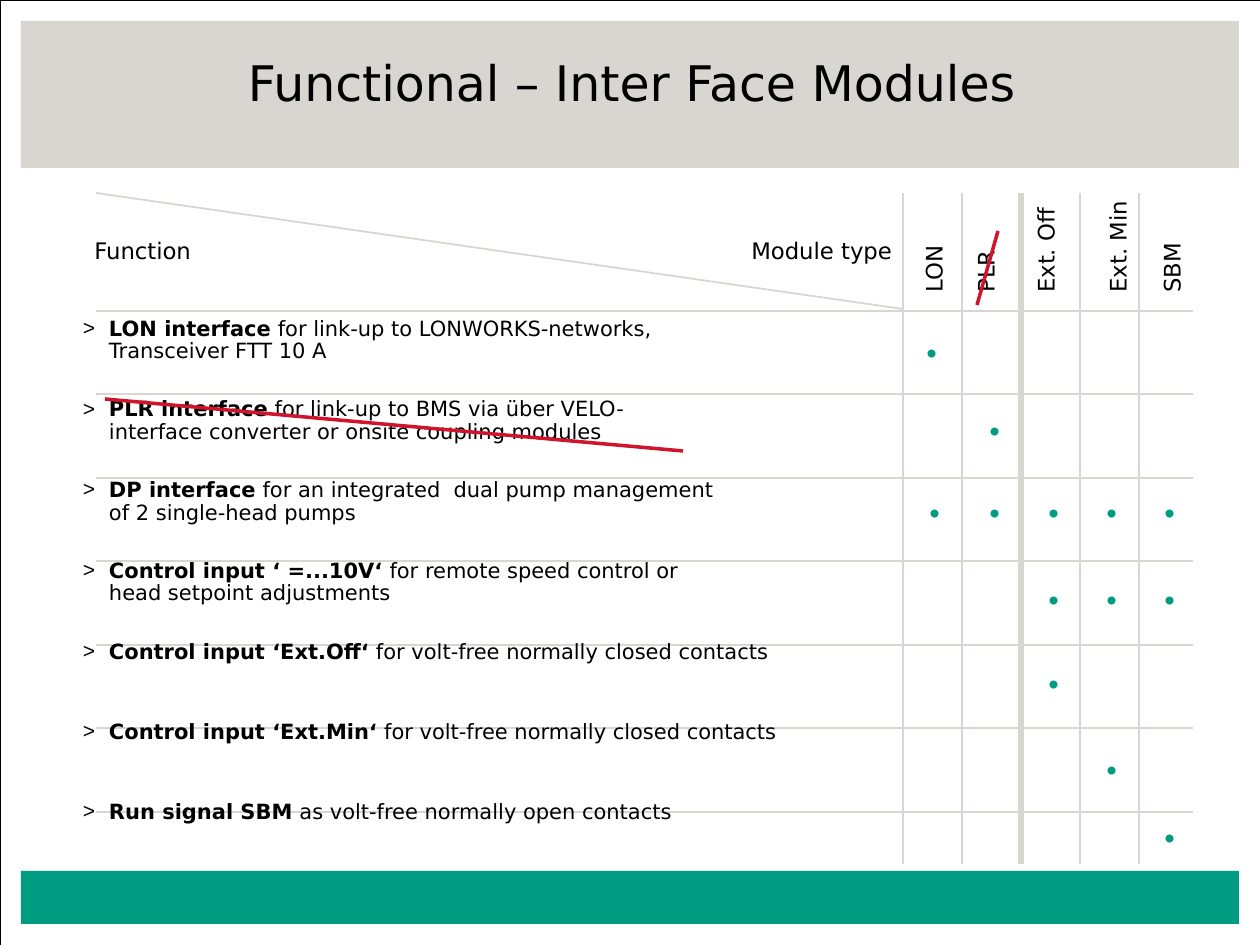
from copy import deepcopy

from lxml.etree import SubElement
from pptx import Presentation
from pptx.dml.color import RGBColor
from pptx.enum.shapes import MSO_CONNECTOR, MSO_SHAPE
from pptx.enum.text import MSO_ANCHOR, MSO_AUTO_SIZE, PP_ALIGN
from pptx.oxml.ns import qn
from pptx.util import Emu, Pt

COLOURS = {"black": "000000", "green": "009C82", "stone": "D9D6D1", "red": "CF142B"}
FUNCTIONS = [
    ("LON interface", " for link-up to LONWORKS-networks,\nTransceiver FTT 10 A"),
    ("PLR interface", " for link-up to BMS via über VELO-\ninterface converter or onsite coupling modules"),
    ("DP interface", " for an integrated  dual pump management\nof 2 single-head pumps"),
    ("Control input ‘ =...10V‘", " for remote speed control or\nhead setpoint adjustments"),
    ("Control input ‘Ext.Off‘", " for volt-free normally closed contacts"),
    ("Control input ‘Ext.Min‘", " for volt-free normally closed contacts"),
    ("Run signal SBM", " as volt-free normally open contacts"),
]
MODULES = [("LON", 936, 76), ("PLR", 988, 71), ("Ext. Off", 1048, 116), ("Ext. Min", 1120, 122), ("SBM", 1174, 78)]
DOT_ROWS = [
    (339, [912]),
    (417, [975]),
    (499, [915, 975, 1034, 1092, 1150]),
    (586, [1034, 1092, 1150]),
    (670, [1034]),
    (756, [1092]),
    (824, [1150]),
]


class SlideBuilder:
    """Draws styled elements on one slide, with lengths in px."""

    font = "DejaVu Sans"
    scale = 914400 / 126
    label_height = 34

    def __init__(self, deck):
        self.slide = deck.slides.add_slide(deck.slide_layouts[1])
        self.shapes = self.slide.shapes

    def px(self, *lengths):
        return [Emu(round(length * self.scale)) for length in lengths]

    def colour(self, name):
        return RGBColor.from_string(COLOURS[name])

    def style(self, span, size, colour="black", bold=False):
        span.font.name = self.font
        span.font.size = Pt(size)
        span.font.bold = bold
        span.font.color.rgb = self.colour(colour)

    def rectangle(self, left, top, width, height, fill=None, line=None):
        box = self.shapes.add_shape(MSO_SHAPE.RECTANGLE, *self.px(left, top, width, height))
        box.shadow.inherit = False
        if fill:
            box.fill.solid()
            box.fill.fore_color.rgb = self.colour(fill)
        else:
            box.fill.background()
        if line:
            box.line.color.rgb = self.colour(line)
            box.line.width = Pt(0.25)
        else:
            box.line.fill.background()

    def line(self, start_x, start_y, end_x, end_y, colour="stone", width=1):
        line = self.shapes.add_connector(MSO_CONNECTOR.STRAIGHT, *self.px(start_x, start_y, end_x, end_y))
        line.line.color.rgb = self.colour(colour)
        line.line.width = Pt(width)
        SubElement(line._element.spPr, qn("a:effectLst"))

    def label(self, text, left, top, width, colour="black", bold=False, rotation=0):
        box = self.shapes.add_textbox(*self.px(left, top, width, self.label_height))
        box.rotation = rotation
        frame = box.text_frame
        frame.word_wrap = False
        frame.auto_size = MSO_AUTO_SIZE.SHAPE_TO_FIT_TEXT
        frame.text = text
        para = frame.paragraphs[0]
        para.line_spacing = 0.8
        self.style(para.runs[0], 13, colour, bold)

    def upright_label(self, text, centre, length, bottom=305):
        top = bottom - (length + self.label_height) / 2
        self.label(text, centre - length / 2, top, length, rotation=270)

    def placeholder(self, index, left, top, width, height, inset_top=0, inset_bottom=0):
        box = self.slide.placeholders[index]
        box.left, box.top, box.width, box.height = self.px(left, top, width, height)
        frame = box.text_frame
        frame.auto_size = MSO_AUTO_SIZE.NONE
        frame.margin_left = frame.margin_right = 0
        frame.margin_top, frame.margin_bottom = self.px(inset_top, inset_bottom)
        self.shapes._spTree.append(box._element)
        return frame

    def title(self, text):
        frame = self.placeholder(0, 147, 73, 969, 58, inset_bottom=20)
        frame.vertical_anchor = MSO_ANCHOR.BOTTOM
        frame.text = text
        para = frame.paragraphs[0]
        para.alignment = PP_ALIGN.CENTER
        self.style(para.runs[0], 28)

    def bullet_list(self, items, pitch=45.37, line_height=12.57):
        frame = self.placeholder(1, 83, 199, 1032, 683, inset_top=119)
        frame.vertical_anchor = MSO_ANCHOR.TOP
        gap = 0
        for index, (name, detail) in enumerate(items):
            para = frame.add_paragraph() if index else frame.paragraphs[0]
            para.text = name
            para.level = 1
            properties = para._p.get_or_add_pPr()
            indent, = self.px(26)
            properties.set("marL", str(indent))
            properties.set("indent", str(-indent))
            SubElement(properties, qn("a:buChar"), char=">")
            para.line_spacing = 0.9
            para.space_before = Pt(gap)
            self.style(para.runs[0], 12, bold=True)
            lines = detail.split("\n")
            for number, text in enumerate(lines):
                if number:
                    para.add_line_break()
                    para._p[-1].append(deepcopy(para.runs[-1]._r.rPr))
                span = para.add_run()
                span.text = text
                self.style(span, 12)
            gap = pitch - len(lines) * line_height


def main():
    deck = Presentation()
    deck.slide_width, deck.slide_height = Emu(9144000), Emu(6858000)
    page = SlideBuilder(deck)
    page.rectangle(0, 0, 1260, 945, line="black")
    page.rectangle(21, 871, 1218, 53, fill="green")
    page.rectangle(21, 21, 1218, 147, fill="stone")
    for row in range(7):
        height = 311 + row * 167 // 2
        page.line(96, height, 1193, height)
    for column in range(5):
        across = 903 + column * 59
        page.line(across, 193, across, 864, width=3 if column == 2 else 1)
    for top, lefts in DOT_ROWS:
        for left in lefts:
            page.label("•", left, top, 40, colour="green", bold=True)
    for module in MODULES:
        page.upright_label(*module)
    page.label("Function", 82, 236, 126)
    page.label("Module type", 739, 236, 171)
    page.line(96, 193, 903, 309)
    page.bullet_list(FUNCTIONS)
    page.line(998, 231, 977, 305, "red", 2)
    page.line(105, 399, 683, 451, "red", 2)
    page.title("Functional – Inter Face Modules")
    deck.save("out.pptx")


if __name__ == "__main__":
    main()
